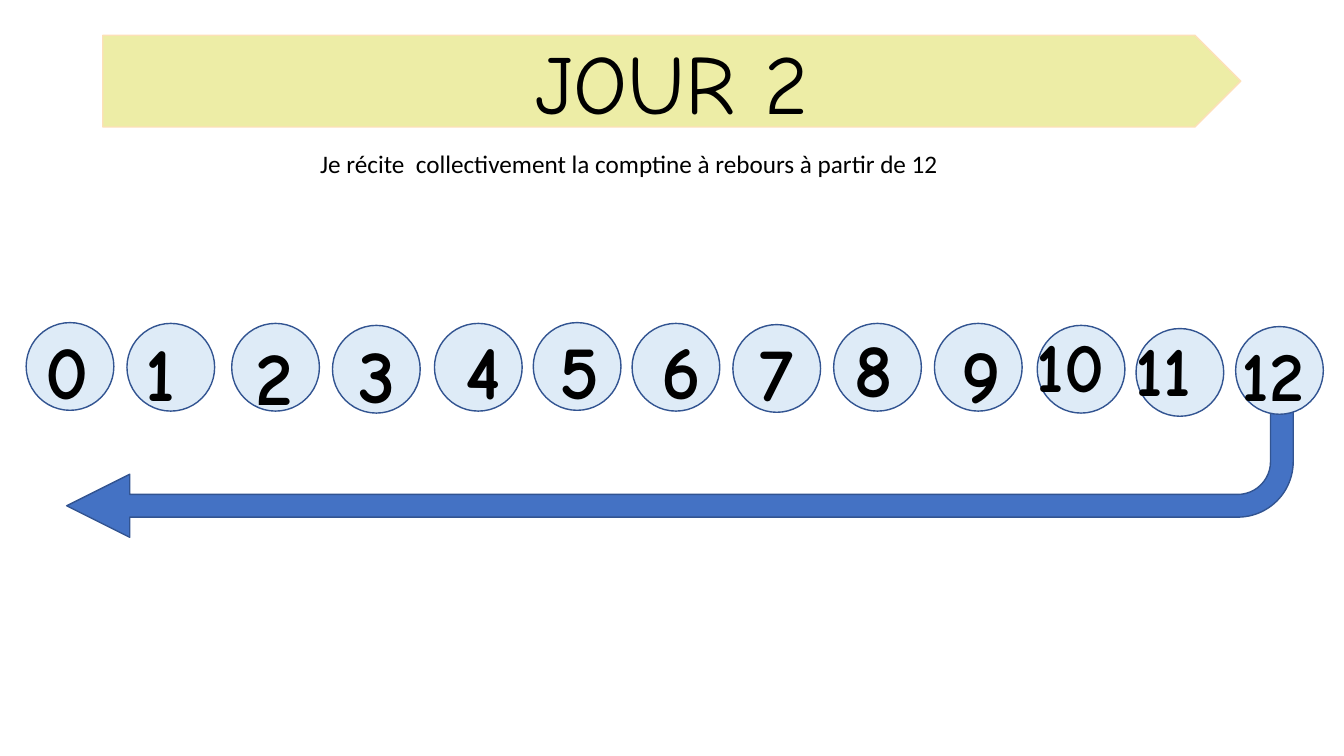
from pptx import Presentation
from pptx import util as u
from pptx.dml import color
from pptx.enum import shapes, text

NUMBER_FONT = "Comic Neue"
BODY_FONT = "Calibri"
CIRCLE_SIZE = 2.21

# Each number: circle left, circle top, digit left, digit top (cm)
NUMBER_PLACES = [
    (0.66, 8.13, 0.89, 8.05),
    (3.2, 8.15, 3.43, 8.08),
    (5.84, 8.15, 6.2, 8.2),
    (8.38, 8.2, 8.79, 8.15),
    (10.95, 8.15, 11.48, 8.05),
    (13.44, 8.13, 13.84, 8.03),
    (15.93, 8.15, 16.41, 8.05),
    (18.47, 8.18, 18.9, 8.08),
    (21.01, 8.15, 21.29, 7.98),
    (23.55, 8.15, 23.98, 8.15),
    (26.14, 8.2, 25.88, 8.0),
    (28.63, 8.28, 28.37, 8.1),
    (31.14, 8.23, 31.04, 8.23),
]


def rgb(value):
    return color.RGBColor.from_string(value)


class SlideBuilder:
    ink = "000000"
    outline = "325491"

    def __init__(self, slide):
        self.slide = slide

    def add_shape(self, kind, left, top, width, height, fill, line=None):
        shape = self.slide.shapes.add_shape(
            kind, u.Cm(left), u.Cm(top), u.Cm(width), u.Cm(height))
        shape.shadow.inherit = False
        shape.fill.solid()
        shape.fill.fore_color.rgb = rgb(fill)
        shape.line.color.rgb = rgb(line or self.outline)
        shape.line.width = u.Pt(1)
        return shape

    def add_text(self, words, left, top, width, height, size, font,
                 bold=False, align=text.PP_ALIGN.LEFT):
        box = self.slide.shapes.add_textbox(
            u.Cm(left), u.Cm(top), u.Cm(width), u.Cm(height))
        frame = box.text_frame
        frame.word_wrap = True
        frame.auto_size = text.MSO_AUTO_SIZE.SHAPE_TO_FIT_TEXT
        paragraph = frame.paragraphs[0]
        paragraph.alignment = align
        run = paragraph.add_run()
        run.text = words
        run.font.size = u.Pt(size)
        run.font.name = font
        run.font.bold = bold
        run.font.color.rgb = rgb(self.ink)


def main():
    presentation = Presentation()
    presentation.slide_width = u.Cm(33.87)
    presentation.slide_height = u.Cm(19.05)
    slide = presentation.slides.add_slide(presentation.slide_layouts[6])
    builder = SlideBuilder(slide)

    # Arrow counting back from 12 to 0
    arrow = builder.add_shape(shapes.MSO_SHAPE.BENT_ARROW,
                              1.68, 10.36, 30.91, 3.18, "4472C4")
    arrow.rotation = 180
    for index, value in enumerate((0.18, 0.25, 0.5, 0.44)):
        arrow.adjustments[index] = value

    # Title banner and instruction
    builder.add_shape(shapes.MSO_SHAPE.PENTAGON,
                      2.59, 0.89, 28.68, 2.31, "EDEDA6", "FDE0B8")
    builder.add_text("JOUR 2", 7.39, 0.64, 19.08, 2.82, 60, NUMBER_FONT,
                     align=text.PP_ALIGN.CENTER)
    builder.add_text(
        "Je récite  collectivement la comptine à rebours à partir de 12",
        7.82, 3.61, 18.75, 1.02, 18, BODY_FONT)

    # Number line
    for number, (left, top, digit_left, digit_top) in enumerate(NUMBER_PLACES):
        builder.add_shape(shapes.MSO_SHAPE.OVAL, left, top,
                          CIRCLE_SIZE, CIRCLE_SIZE, "DEEBF7")
        width, size = (2.21, 54) if number < 10 else (2.8, 50)
        builder.add_text(str(number), digit_left, digit_top, width, 2.39,
                         size, NUMBER_FONT, bold=True)

    presentation.save("out.pptx")


if __name__ == "__main__":
    main()
